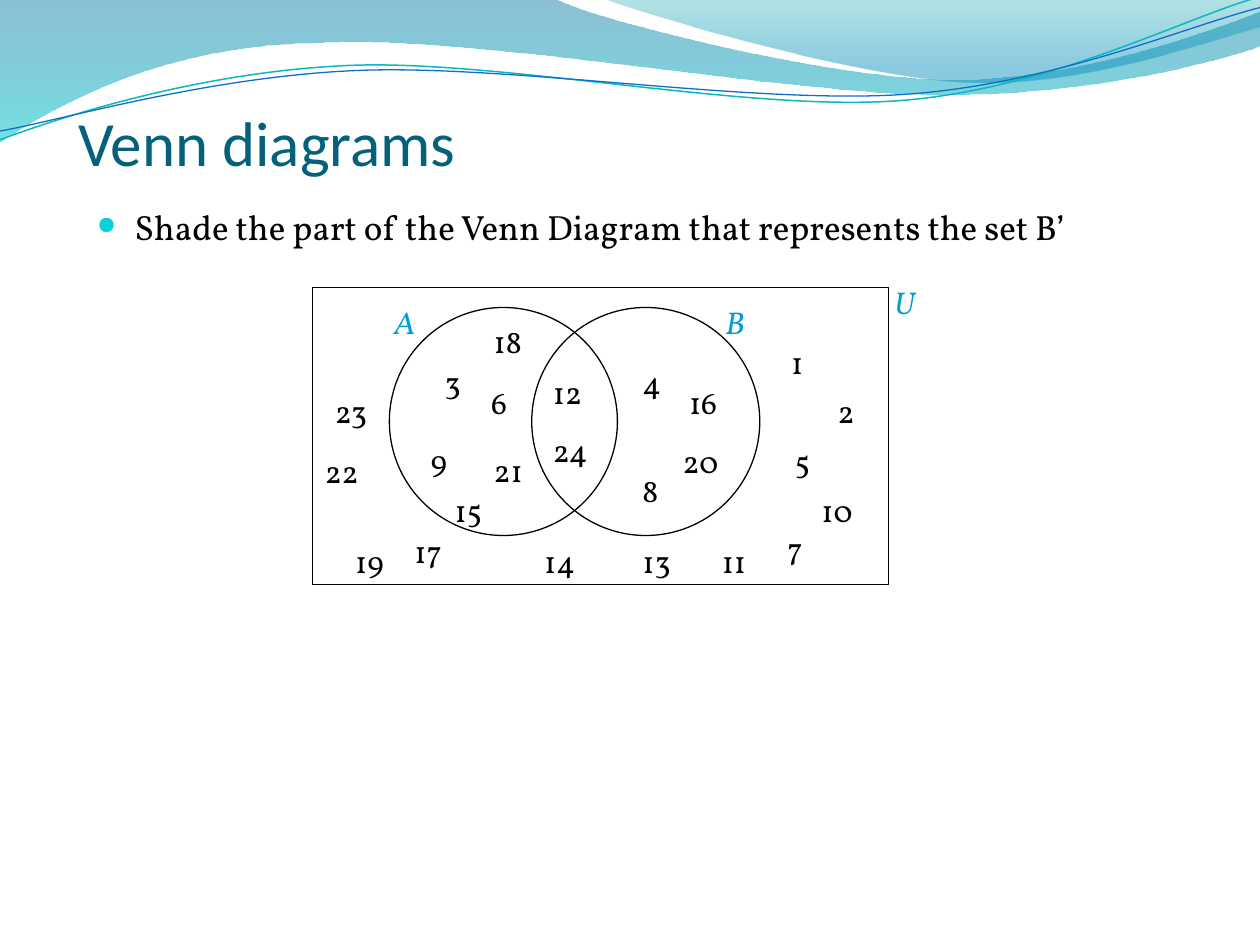
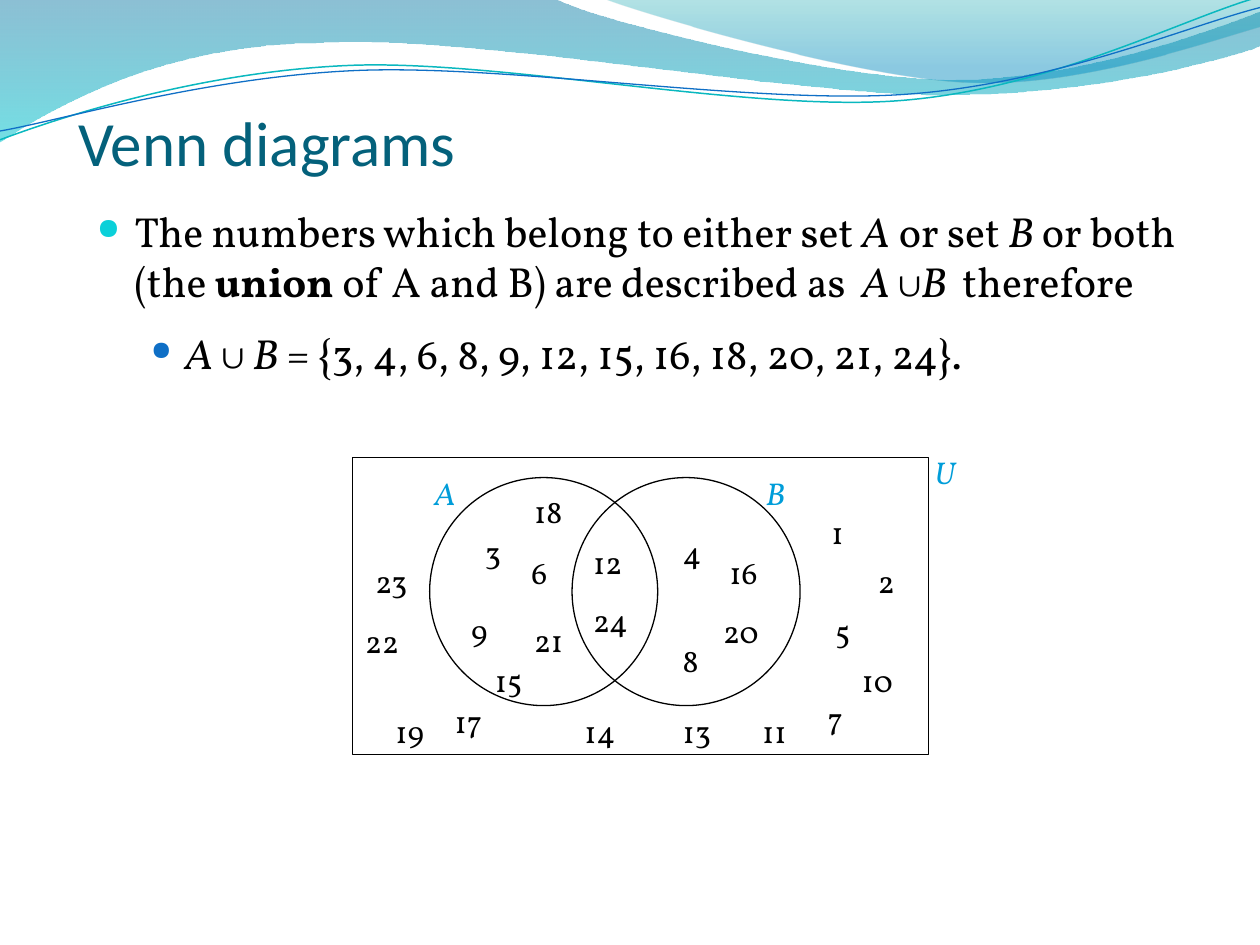
import pptx
import pptx.util
import pptx.dml.color
import pptx.enum.shapes
import pptx.enum.text
import pptx.oxml.ns
import lxml.etree

Inches = pptx.util.Inches
Pt = pptx.util.Pt
RGB = pptx.dml.color.RGBColor
Shape = pptx.enum.shapes.MSO_SHAPE
Text = pptx.enum.text
qn = pptx.oxml.ns.qn
sub = lxml.etree.SubElement

# Colours
BLACK = RGB(0x00, 0x00, 0x00)
WHITE = RGB(0xFF, 0xFF, 0xFF)
TITLE = RGB(0x04, 0x61, 0x7B)
LABEL = RGB(0x00, 0x9D, 0xD9)
CYAN = RGB(0x0B, 0xD0, 0xD9)
BLUE = RGB(0x0F, 0x6F, 0xC6)
TEAL = RGB(0x0A, 0xB8, 0xBF)
DEEP = RGB(0x00, 0x74, 0xA1)
AQUA = RGB(0x00, 0xC6, 0xCF)
GREEN = RGB(0x00, 0xA1, 0xA9)
SKY = RGB(0x00, 0x8B, 0xBF)

HEAD, BODY = "Calibri", "Vollkorn"

# Wave bands: outline points (2 numbers a corner, 6 a curve), stops (place, colour, opacity)
BANDS = [
    ([(0, -0.01), (4.4, -0.01), (4.76, 0.17, 6.64, 0.63, 7.58, 0.63),
      (8.53, 0.63, 9.58, 0.26, 10, 0.09), (10.01, 0.36),
      (9.83, 0.44, 8.7, 0.76, 7.46, 0.75), (6.22, 0.75, 3.82, 0.28, 2.57, 0.34),
      (1.29, 0.35, 0.46, 0.83, -0.01, 1.13)],
     [(0, DEEP, 45), (1, AQUA, 55)]),
    ([(4.79, -0.01), (5.09, 0.11, 6.82, 0.62, 7.69, 0.65),
      (8.56, 0.69, 9.61, 0.32, 10, 0.21), (10, 0)],
     [(0, GREEN, 30), (0.8, SKY, 45)]),
]
# Wave lines: points, colour, width
WAVES = [
    ([(0, 1.11), (0.48, 0.93, 1.58, 0.57, 2.77, 0.52),
      (3.95, 0.47, 5.93, 0.89, 7.13, 0.8), (8.33, 0.71, 9.38, 0.15, 9.98, -0.02)],
     TEAL, 0.85),
    ([(0, 1.04), (0.47, 0.96, 1.64, 0.61, 2.83, 0.56),
      (4.03, 0.51, 5.97, 0.83, 7.17, 0.75), (8.36, 0.67, 9.41, 0.21, 10, 0.06)],
     BLUE, 0.75),
]

# Places inside the Venn diagram, from the corner of its frame
NUMBERS = {
    1: (3.7, 0.39), 2: (4.07, 0.78), 3: (0.95, 0.55), 4: (2.52, 0.55),
    5: (3.73, 1.18), 6: (1.32, 0.71), 7: (3.67, 1.87), 8: (2.52, 1.41),
    9: (0.84, 1.17), 10: (3.94, 1.57), 11: (3.15, 1.97), 12: (1.81, 0.63),
    13: (2.52, 1.97), 14: (1.74, 1.97), 15: (1.03, 1.57), 16: (2.89, 0.71),
    17: (0.71, 1.89), 18: (1.34, 0.23), 19: (0.24, 1.97), 20: (2.84, 1.18),
    21: (1.34, 1.25), 22: (0, 1.26), 23: (0.08, 0.78), 24: (1.81, 1.09),
}
WIDE = {10, 11, 13, 14, 17, 19, 22, 23}
LETTERS = {"A": (0.55, 0.08), "B": (3.18, 0.08), "U": (4.52, -0.08)}
RINGS = [(0.61, 0.16), (1.74, 0.16)]

# Bullet styles by level
BULLETS = [
    {"left": 0.3, "hang": 0.3, "color": CYAN, "size": 70, "gap": 0},
    {"left": 0.7, "hang": 0.27, "color": BLUE, "size": 63, "gap": 12},
]


def put(item, values):
    for name, value in values.items():
        setattr(item, name, value)


def style(font, size, color=BLACK, face=BODY, **more):
    put(font, {"size": Pt(size), "name": face, **more})
    font.color.rgb = color


def box(left, top, width, height):
    return [Inches(n) for n in (left, top, width, height)]


# Freeform waves
def bend(shape, points):
    """Turn each straight side that has handles into a cubic curve."""
    sides = list(shape.element.iter(qn("a:lnTo")))
    for side, part in zip(sides, points[1:]):
        if len(part) == 6:
            cubic = lxml.etree.Element(qn("a:cubicBezTo"))
            for x, y in zip(part[::2], part[1::2]):
                sub(cubic, qn("a:pt"), x=str(Inches(x) - shape.left),
                    y=str(Inches(y) - shape.top))
            side.getparent().replace(side, cubic)


def wave(slide, points, close):
    ends = [(Inches(part[-2]), Inches(part[-1])) for part in points]
    pen = slide.shapes.build_freeform(*ends[0])
    pen.add_line_segments(ends[1:], close=close)
    shape = pen.convert_to_shape()
    shape.shadow.inherit = False
    bend(shape, points)
    return shape


def band(slide, points, stops):
    shape = wave(slide, points, True)
    shape.fill.gradient()
    shape.fill.gradient_angle = 270
    for stop, (place, color, _) in zip(shape.fill.gradient_stops, stops):
        stop.position = place
        stop.color.rgb = color
    for node, stop in zip(shape.element.iter(qn("a:srgbClr")), stops):
        sub(node, qn("a:alpha"), val=str(stop[2] * 1000))
    shape.line.fill.background()
    return shape


def curve(slide, points, color, width):
    shape = wave(slide, points, False)
    shape.fill.background()
    shape.line.color.rgb = color
    shape.line.width = Pt(width)
    return shape


def theme(slide):
    """Draw the waves once and keep them on the layout behind every title."""
    shapes = [band(slide, *item) for item in BANDS]
    shapes += [curve(slide, *item) for item in WAVES]
    for i, shape in enumerate(shapes):
        slide.slide_layout.shapes.element.insert(2 + i, shape.element)


# Text
def title(slide, words):
    head = slide.shapes.title
    put(head, dict(zip(("left", "top", "width", "height"), box(0.62, 0.17, 7.92, 1.25))))
    frame = head.text_frame
    frame.text = words
    put(frame, {"margin_left": 0, "margin_right": 0, "margin_top": Inches(0.05),
                "margin_bottom": 0, "auto_size": Text.MSO_AUTO_SIZE.NONE,
                "vertical_anchor": Text.MSO_ANCHOR.BOTTOM})
    para = frame.paragraphs[0]
    para.alignment = Text.PP_ALIGN.LEFT
    style(para.runs[0].font, 36, TITLE, HEAD)


def bullet(para, level):
    look = BULLETS[level]
    put(para, {"level": level, "space_before": Pt(look["gap"])})
    props = para._p.get_or_add_pPr()
    props.set("marL", str(Inches(look["left"])))
    props.set("indent", str(-Inches(look["hang"])))
    color = sub(props, qn("a:buClr"))
    sub(color, qn("a:srgbClr"), val=str(look["color"]))
    sub(props, qn("a:buSzPct"), val=str(look["size"] * 1000))
    sub(props, qn("a:buChar"), char="●")


def body(slide, place, size, lines):
    frame = slide.shapes.add_textbox(*box(*place)).text_frame
    frame.word_wrap = True
    for level, runs in enumerate(lines):
        para = frame.paragraphs[0] if level == 0 else frame.add_paragraph()
        bullet(para, level)
        for words, kind in runs:
            run = para.add_run()
            run.text = words
            style(run.font, size, bold=kind == "b", italic=kind == "i")


# Venn diagram
def outline(group, kind, place, fill=None):
    shape = group.shapes.add_shape(kind, *box(*place))
    shape.shadow.inherit = False
    if fill is None:
        shape.fill.background()
    else:
        shape.fill.solid()
        shape.fill.fore_color.rgb = fill
    shape.line.color.rgb = BLACK
    shape.line.width = Pt(0.75)


def label(group, words, left, top, width, color=BLACK, italic=False):
    frame = group.shapes.add_textbox(*box(left, top, width, 0.4)).text_frame
    put(frame, {"word_wrap": width > 0.5,
                "auto_size": Text.MSO_AUTO_SIZE.SHAPE_TO_FIT_TEXT})
    run = frame.paragraphs[0].add_run()
    run.text = words
    style(run.font, 18, color, italic=italic)


def venn(slide, left, top):
    group = slide.shapes.add_group_shape()
    outline(group, Shape.RECTANGLE, (left, top, 4.57, 2.36), WHITE)
    for number, (x, y) in NUMBERS.items():
        width = 0.55 if number in WIDE else 0.34 if number < 10 else 0.48
        label(group, str(number), left + x, top + y, width)
    for x, y in RINGS:
        outline(group, Shape.OVAL, (left + x, top + y, 1.81, 1.81))
    for letter, (x, y) in LETTERS.items():
        label(group, letter, left + x, top + y, 0.37, LABEL, True)


def main():
    deck = pptx.Presentation()
    put(deck, {"slide_width": Inches(10), "slide_height": Inches(7.5)})
    layout = deck.slide_layouts.get_by_name("Title Only")
    shade, union = [deck.slides.add_slide(layout) for _ in range(2)]
    theme(shade)

    # Slide 1: the complement of B
    title(shade, "Venn diagrams")
    body(shade, (0.67, 1.58, 8.75, 4.29), 20, [
        [("Shade the part of the Venn Diagram that represents the set B’", "")]])
    venn(shade, 2.48, 2.28)

    # Slide 2: the union of A and B
    title(union, "Venn diagrams")
    body(union, (0.67, 1.58, 8.9, 5.24), 24, [
        [("The numbers which belong to either set ", ""), ("A", "i"), (" or set ", ""),
         ("B", "i"), (" or both (the ", ""), ("union", "b"),
         (" of A and B) are described as ", ""), (" A ", "i"), ("∪", ""), ("B ", "i"),
         (" therefore", "")],
        [("A ", "i"), ("∪ ", ""), ("B", "i"),
         (" = {3, 4, 6, 8, 9, 12, 15, 16, 18, 20, 21, 24}.", "")]])
    venn(union, 2.8, 3.63)

    deck.save("out.pptx")


if __name__ == "__main__":
    main()
